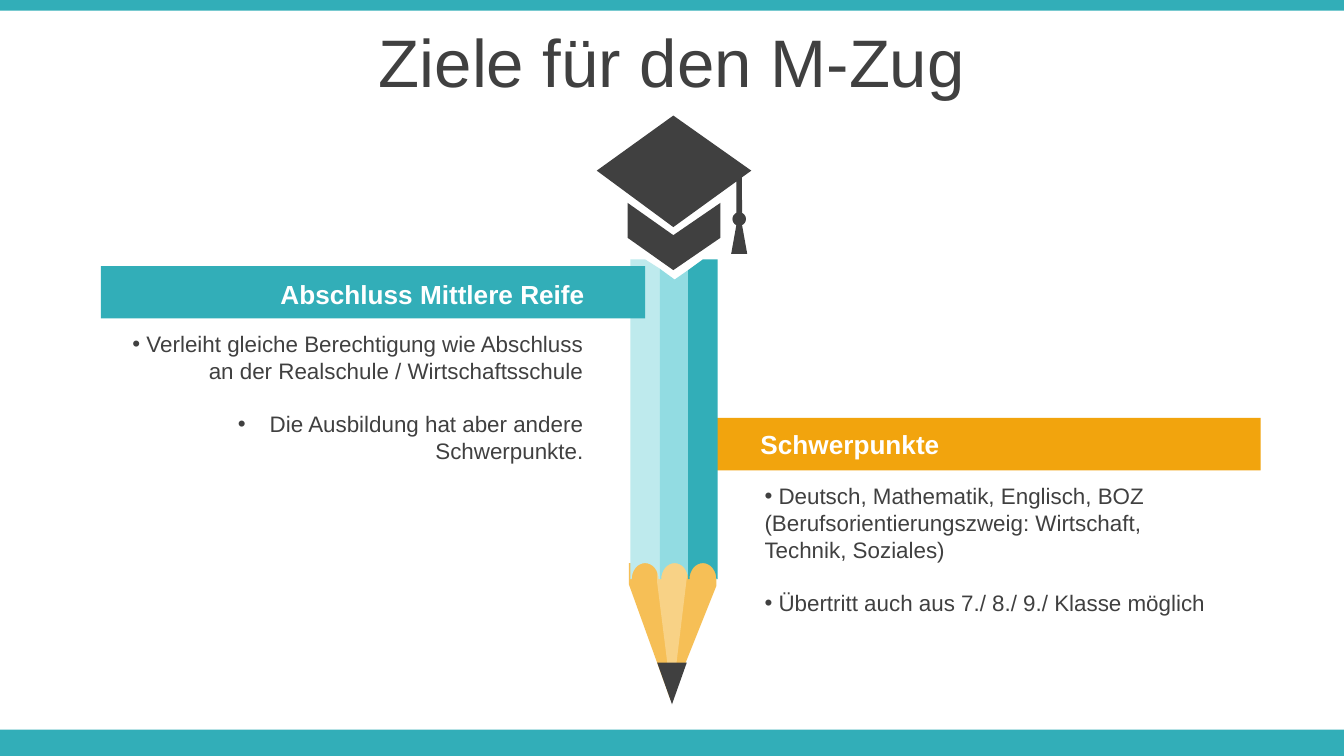
from math import cos, pi, sin

from lxml.etree import SubElement
from pptx import Presentation
from pptx.dml.color import RGBColor
from pptx.enum.shapes import MSO_SHAPE as SHAPE
from pptx.enum.text import MSO_ANCHOR as ANCHOR, PP_ALIGN as ALIGN
from pptx.oxml.ns import qn
from pptx.util import Inches, Pt

COLORS = {
    "teal": "32AEB8", "mid_teal": "92DCE2", "light_teal": "BEEAED",
    "orange": "F2A40D", "wood": "F6BF56", "light_wood": "F8D286",
    "dark": "404040", "white": "FFFFFF",
}


def arc(cx, cy, rx, ry, start, end, steps=16):
    """Points along an ellipse; angles in degrees, y pointing down."""
    angles = [(start + (end - start) * i / steps) * pi / 180 for i in range(steps + 1)]
    return [(cx + rx * cos(a), cy + ry * sin(a)) for a in angles]


class SlideBuilder:
    font = "Arial"

    def __init__(self, slide):
        self.s = slide

    def paint(self, sp, color):
        sp.shadow.inherit = False
        sp.fill.solid()
        sp.fill.fore_color.rgb = RGBColor.from_string(COLORS[color])
        sp.line.fill.background()
        return sp

    def shape(self, x, y, w, h, color, kind=SHAPE.RECTANGLE):
        sp = self.s.shapes.add_shape(kind, Inches(x), Inches(y), Inches(w), Inches(h))
        return self.paint(sp, color)

    def outline(self, color, *contours):
        fb = None
        for contour in contours:
            start, *rest = [(Inches(x), Inches(y)) for x, y in contour]
            if fb is None:
                fb = self.s.shapes.build_freeform(*start)
            else:
                fb.move_to(*start)
            fb.add_line_segments(rest, close=True)
        return self.paint(fb.convert_to_shape(), color)

    def bullet(self, p, indent):
        pPr = p._p.get_or_add_pPr()
        pPr.set("marL", str(Inches(indent)))
        pPr.set("indent", str(-Inches(indent)))
        SubElement(pPr, qn("a:buFont")).set("typeface", self.font)
        SubElement(pPr, qn("a:buChar")).set("char", "•")

    def text(self, x, y, w, h, lines, size, color="dark", bold=False,
             align=ALIGN.LEFT, anchor=ANCHOR.TOP, indents=None, gap=0):
        tf = self.s.shapes.add_textbox(Inches(x), Inches(y), Inches(w), Inches(h)).text_frame
        tf.word_wrap = True
        tf.vertical_anchor = anchor
        for i, line in enumerate(lines):
            p = tf.add_paragraph() if i else tf.paragraphs[0]
            p.alignment = align
            if i:
                p.space_before = Pt(gap)
            if indents:
                self.bullet(p, indents[i])
            r = p.add_run()
            r.text = line
            r.font.name, r.font.size, r.font.bold = self.font, Pt(size), bold
            r.font.color.rgb = RGBColor.from_string(COLORS[color])


def draw_pencil(b):
    # Wooden tip
    b.outline("wood", [(4.68, 4.19), (5.33, 4.19), (5.33, 4.36), (4.99, 5.21), (4.68, 4.35)])
    b.outline("light_wood", [(4.89, 4.18), (5.11, 4.18), (5.11, 4.3), (5, 5.21), (4.89, 4.34)])

    # Three painted strips, each with a scalloped lower end
    strips = [
        ("light_teal", 4.69, [(4.69, 1.93), (4.8, 1.93), (4.91, 2)]),
        ("mid_teal", 4.91, [(4.91, 2), (5.02, 2.08), (5.12, 2.01)]),
        ("teal", 5.12, [(5.12, 2.01), (5.23, 1.93), (5.34, 1.93)]),
    ]
    for color, x, top in strips:
        scallop = arc(x + 0.11, 4.31, 0.1, 0.12, 0, -180)
        b.outline(color, top + [(top[-1][0], 4.31)] + scallop + [(x, 4.31)])

    # Lead
    b.shape(4.89, 4.93, 0.22, 0.31, "dark", SHAPE.ISOSCELES_TRIANGLE).rotation = 180


def draw_cap(b):
    band = [(4.67, 1.51), (5.01, 1.75), (5.36, 1.51), (5.36, 1.77), (5.01, 2.01), (4.67, 1.77)]
    knot_right = arc(5.5, 1.63, 0.05, 0.05, -65, 65)
    knot_left = arc(5.5, 1.63, 0.05, 0.05, 115, 245)
    board = ([(5.01, 0.86), (5.59, 1.27), (5.52, 1.32)] + knot_right
             + [(5.56, 1.89), (5.44, 1.89)] + knot_left
             + [(5.48, 1.35), (5.01, 1.69), (4.44, 1.27)])
    b.outline("dark", band, board)


def main():
    prs = Presentation()
    prs.slide_width = Inches(10)
    prs.slide_height = prs.slide_width * 9 // 16
    b = SlideBuilder(prs.slides.add_slide(prs.slide_layouts[6]))

    # Page bands and title
    b.shape(0, 5.43, 10, 0.2, "teal")
    b.shape(0, 0, 10, 0.08, "teal")
    b.text(0, 0.14, 10, 0.63, ["Ziele für den M-Zug"], 36,
           align=ALIGN.CENTER, anchor=ANCHOR.MIDDLE)

    # Pencil between the two heading bars
    b.shape(5.33, 3.11, 4.05, 0.39, "orange")
    draw_pencil(b)
    draw_cap(b)
    b.shape(0.75, 1.98, 4.05, 0.39, "teal")

    # Headings
    b.text(5.56, 3.14, 2.59, 0.34, ["Schwerpunkte"], 14, "white", True)
    b.text(0.94, 2.02, 3.51, 0.34, ["Abschluss Mittlere Reife"], 14, "white", True, ALIGN.RIGHT)

    # Bullet lists
    b.text(5.59, 3.54, 3.58, 1.11, [
        " Deutsch, Mathematik, Englisch, BOZ (Berufsorientierungszweig: Wirtschaft, "
        "Technik, Soziales)",
        " Übertritt auch aus 7./ 8./ 9./ Klasse möglich",
    ], 12, indents=(0, 0), gap=14)
    b.text(0.86, 2.41, 3.58, 1.11, [
        " Verleiht gleiche Berechtigung wie Abschluss an der Realschule / Wirtschaftsschule",
        " Die Ausbildung hat aber andere Schwerpunkte.",
    ], 12, align=ALIGN.RIGHT, indents=(0, 0.19), gap=14)

    prs.save("out.pptx")


if __name__ == "__main__":
    main()
